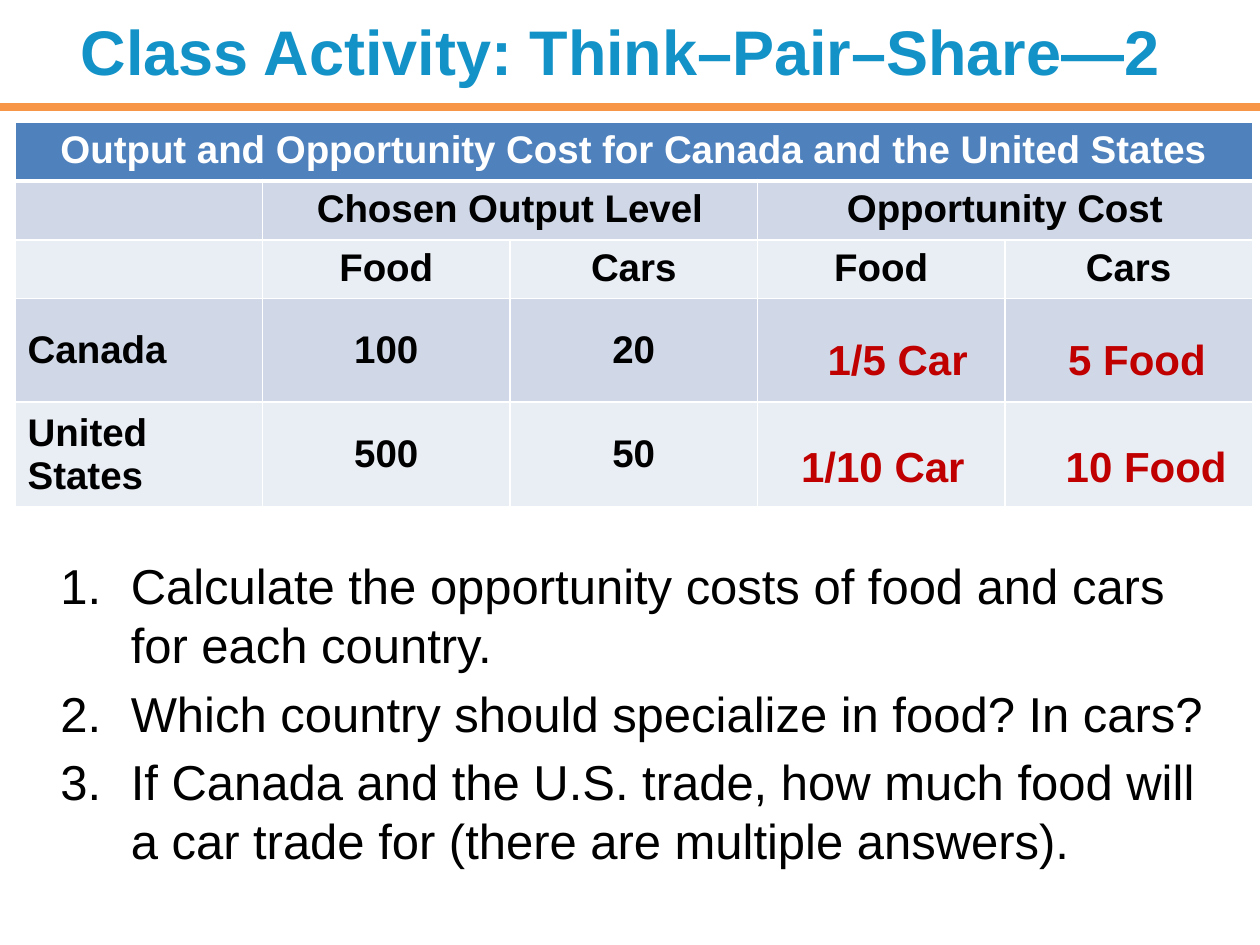
from lxml.etree import SubElement
from pptx import Presentation
from pptx.dml.color import RGBColor
from pptx.enum.shapes import MSO_CONNECTOR as Connector
from pptx.enum.text import MSO_ANCHOR as Anchor, MSO_AUTO_SIZE as AutoSize, PP_ALIGN as Align
from pptx.oxml.ns import qn
from pptx.util import Inches, Pt

BLUE = RGBColor(0x13, 0x92, 0xC8)
ORANGE = RGBColor(0xF7, 0x96, 0x46)
HEADER = RGBColor(0x4F, 0x81, 0xBD)
BAND_DARK = RGBColor(0xD0, 0xD8, 0xE8)
BAND_LIGHT = RGBColor(0xE9, 0xED, 0xF4)
RED = RGBColor(0xC0, 0x00, 0x00)
WHITE = RGBColor(0xFF, 0xFF, 0xFF)
BLACK = RGBColor(0x00, 0x00, 0x00)

COLUMNS = 5
ROW_HEIGHTS = [0.44, 0.44, 0.44, 0.82, 0.78]
TABLE_LEFT, TABLE_TOP, TABLE_WIDTH = 0.12, 0.97, 9.82
ROWS = [
    ["Output and Opportunity Cost for Canada and the United States", "", "", "", ""],
    ["", "Chosen Output Level", "", "Opportunity Cost", ""],
    ["", "Food", "Cars", "Food", "Cars"],
    ["Canada", "100", "20", "", ""],
    ["United States", "500", "50", "", ""],
]
MERGES = [(0, 0, 4), (1, 1, 2), (1, 3, 4)]
ANSWERS = [
    ("5 Food", 8.38, 2.6, 1.3),
    ("1/5 Car", 6.47, 2.6, 1.33),
    ("1/10 Car", 6.26, 3.45, 1.61),
    ("10 Food", 8.36, 3.45, 1.49),
]
QUESTIONS = [
    "Calculate the opportunity costs of food and cars for each country.",
    "Which country should specialize in food? In cars?",
    "If Canada and the U.S. trade, how much food will a car trade for (there are multiple answers).",
]


def set_attributes(target, values):
    for name, value in values.items():
        setattr(target, name, value)


def write(para, text, size, color, bold=False, align=Align.LEFT):
    para.alignment = align
    span = para.add_run()
    span.text = text
    set_attributes(span.font, {"name": "Arial", "size": Pt(size), "bold": bold})
    span.font.color.rgb = color


def add_title(page, text):
    title = page.shapes.title
    set_attributes(title, {"left": Inches(0.54), "top": Inches(-0.02),
                           "width": Inches(9), "height": Inches(0.84)})
    set_attributes(title.text_frame, {"vertical_anchor": Anchor.MIDDLE, "word_wrap": True,
                                      "auto_size": AutoSize.NONE})
    write(title.text_frame.paragraphs[0], text, 36, BLUE, bold=True)


def add_rule(page, width):
    top = Inches(0.85)
    rule = page.shapes.add_connector(Connector.STRAIGHT, 0, top, width, top)
    rule.line.color.rgb = ORANGE
    rule.line.width = Pt(4.5)
    SubElement(rule._element.spPr, qn("a:effectLst"))


def add_text_box(page, left, top, width, height, wrap):
    box = page.shapes.add_textbox(*map(Inches, (left, top, width, height)))
    box.text_frame.word_wrap = wrap
    return box.text_frame


def set_borders(cell, row):
    weights = {"L": 1, "R": 1, "T": 3 if row == 1 else 1, "B": 3 if row == 0 else 1}
    properties = cell._tc.get_or_add_tcPr()
    for side, weight in weights.items():
        line = SubElement(properties, qn(f"a:ln{side}"), w=str(Pt(weight)))
        fill = SubElement(line, qn("a:solidFill"))
        SubElement(fill, qn("a:srgbClr"), val=str(WHITE))


def format_cell(cell, text, row, column):
    set_borders(cell, row)
    cell.fill.solid()
    cell.fill.fore_color.rgb = HEADER if row == 0 else BAND_DARK if row % 2 else BAND_LIGHT
    cell.vertical_anchor = Anchor.MIDDLE if row > 2 else Anchor.TOP
    if text:
        align = Align.LEFT if row > 2 and column == 0 else Align.CENTER
        write(cell.text_frame.paragraphs[0], text, 22, BLACK if row else WHITE, True, align)


def add_cost_table(page):
    frame = page.shapes.add_table(len(ROWS), COLUMNS, Inches(TABLE_LEFT), Inches(TABLE_TOP),
                                  Inches(TABLE_WIDTH), Inches(sum(ROW_HEIGHTS)))
    table = frame.table
    for row, (texts, height) in enumerate(zip(ROWS, ROW_HEIGHTS)):
        table.rows[row].height = Inches(height)
        for column, text in enumerate(texts):
            format_cell(table.cell(row, column), text, row, column)
    for row, first, last in MERGES:
        table.cell(row, first).merge(table.cell(row, last))


def add_answer(page, text, left, top, width):
    frame = add_text_box(page, left, top, width, 0.5, False)
    frame.auto_size = AutoSize.SHAPE_TO_FIT_TEXT
    write(frame.paragraphs[0], text, 24, RED, bold=True)


def add_questions(page):
    frame = add_text_box(page, 0.38, 4.36, 9.39, 2.62, True)
    indent = Inches(0.56)
    for index, question in enumerate(QUESTIONS):
        para = frame.add_paragraph() if index else frame.paragraphs[0]
        write(para, question, 28, BLACK)
        para.space_before = Pt(5.6)
        properties = para._p.get_or_add_pPr()
        properties.set("marL", str(indent))
        properties.set("indent", str(-indent))
        SubElement(properties, qn("a:buFont"), typeface="+mj-lt")
        SubElement(properties, qn("a:buAutoNum"), type="arabicPeriod")


def main():
    deck = Presentation()
    set_attributes(deck, {"slide_width": Inches(10), "slide_height": Inches(7.5)})
    page = deck.slides.add_slide(deck.slide_layouts[5])
    add_rule(page, deck.slide_width)
    add_title(page, "Class Activity: Think–Pair–Share—2")
    add_questions(page)
    add_cost_table(page)
    for answer in ANSWERS:
        add_answer(page, *answer)
    deck.save("out.pptx")


if __name__ == "__main__":
    main()
